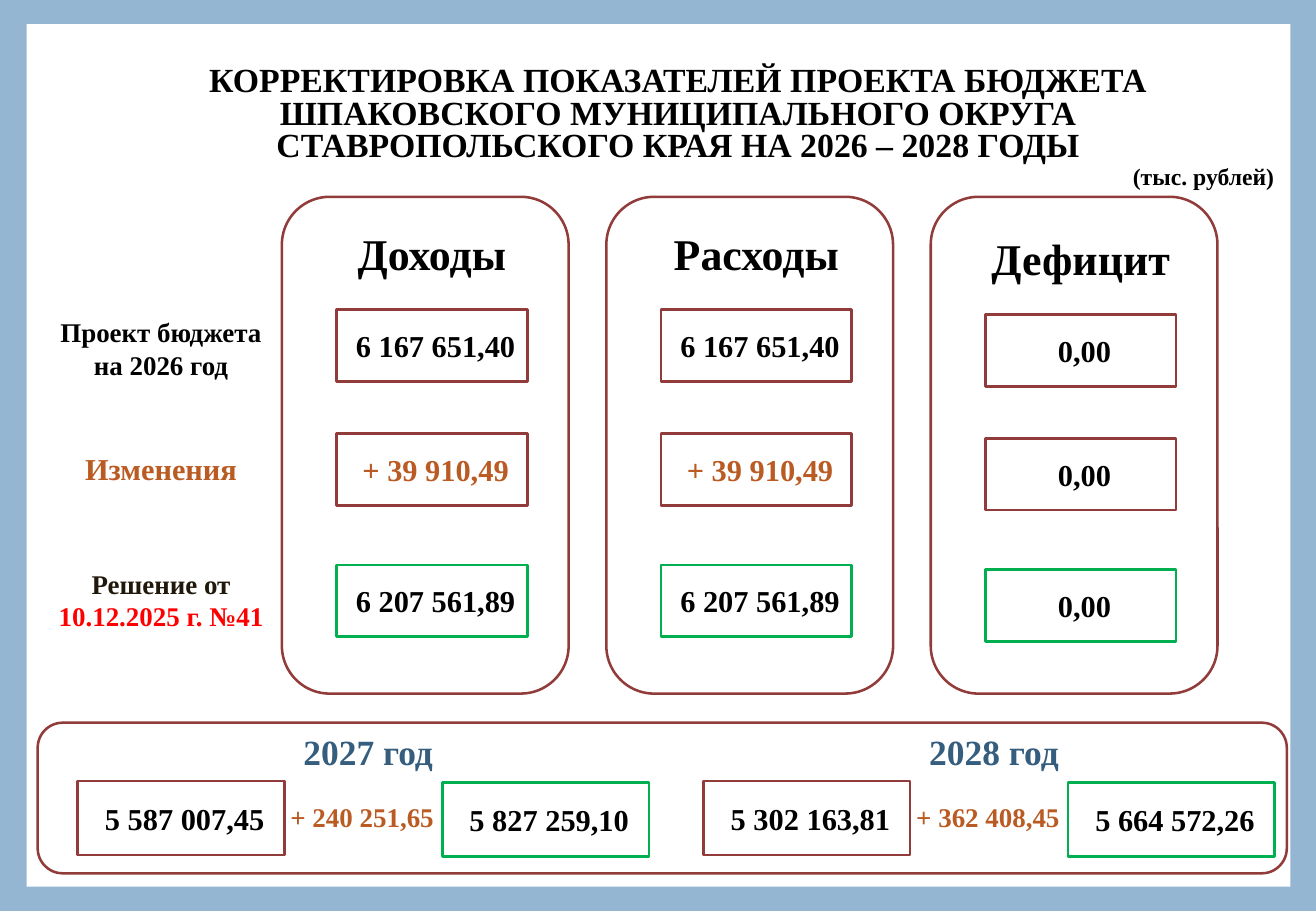
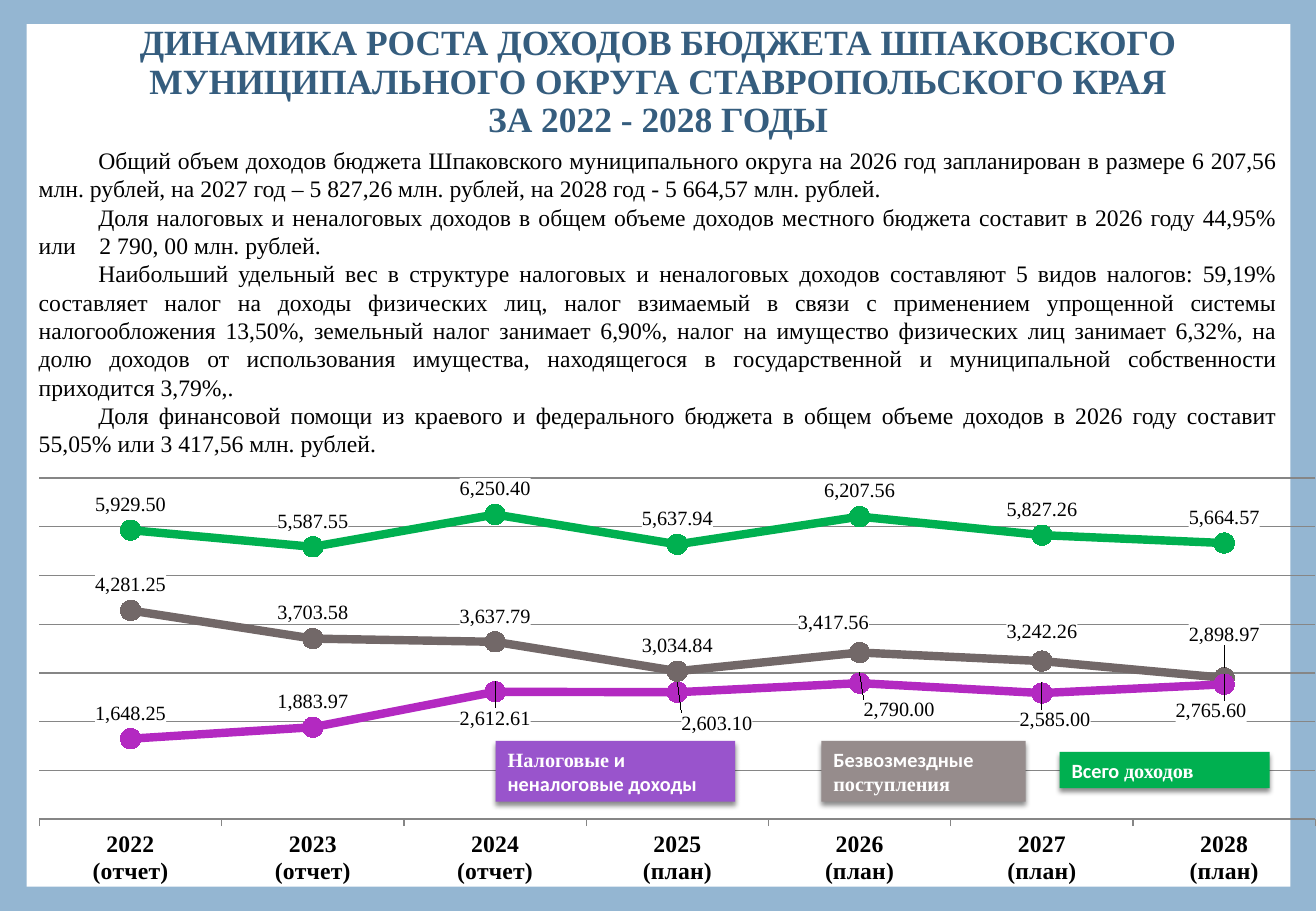
"""Builds two slides on the 2026-2028 municipal budget: adjusted figures and revenue trend."""
import pptx
import pptx.chart.data
import pptx.dml.color
import pptx.enum.chart
import pptx.enum.shapes
import pptx.enum.text
import pptx.oxml
import pptx.oxml.ns
import pptx.util
from dataclasses import dataclass

Inches = pptx.util.Inches
Pt = pptx.util.Pt
SHAPES = pptx.enum.shapes.MSO_SHAPE
ALIGN = pptx.enum.text.PP_ALIGN
ANCHOR = pptx.enum.text.MSO_ANCHOR
qn = pptx.oxml.ns.qn


@dataclass(frozen=True)
class Theme:
    serif: str = "Times New Roman"
    sans: str = "Calibri"
    edge: str = "94B6D2"
    white: str = "FFFFFF"
    black: str = "000000"
    dark: str = "20190B"
    red: str = "FF0000"
    maroon: str = "913C3A"
    green: str = "00B050"
    orange: str = "B95B22"
    blue: str = "355D7E"
    grid: str = "868686"
    grey: str = "726868"
    grey_fill: str = "968C8C"
    magenta: str = "B329C1"
    violet: str = "9954CC"
    heading: int = 26
    title: int = 21
    lead: int = 20
    figure: int = 18
    label: int = 16
    body: int = 14
    small: int = 12


THEME = Theme()

ADJUST_TITLE = ("КОРРЕКТИРОВКА ПОКАЗАТЕЛЕЙ ПРОЕКТА БЮДЖЕТА\nШПАКОВСКОГО МУНИЦИПАЛЬНОГО ОКРУГА\n"
                "СТАВРОПОЛЬСКОГО КРАЯ НА 2026 – 2028 ГОДЫ")
UNIT = "(тыс. рублей)"
COLUMNS = [("Доходы", 0), ("Расходы", 0), ("Дефицит", 0.04)]
ROWS = [
    dict(label=[[("Проект бюджета", {})], [("на 2026 год", {})]], label_top=2.55, top=2.55,
         frame=THEME.maroon, figures=["6 167 651,40", "6 167 651,40", "0,00"]),
    dict(label=[[("Изменения", dict(color=THEME.orange, size=THEME.figure))]], label_top=3.66, top=3.57,
         frame=THEME.maroon, figures=["+ 39 910,49", "+ 39 910,49", "0,00"]),
    dict(label=[[("Решение от ", dict(color=THEME.dark)), ("10.12.2025 г. №41", dict(color=THEME.red))]],
         label_top=4.62, top=4.65, frame=THEME.green, figures=["6 207 561,89", "6 207 561,89", "0,00"]),
]
YEARS = [
    ("2027 год", "5 587 007,45", "+ 240 251,65", "5 827 259,10"),
    ("2028 год", "5 302 163,81", "+ 362 408,45", "5 664 572,26"),
]

GROWTH_TITLE = ("ДИНАМИКА РОСТА ДОХОДОВ БЮДЖЕТА ШПАКОВСКОГО МУНИЦИПАЛЬНОГО ОКРУГА "
                "СТАВРОПОЛЬСКОГО КРАЯ\nЗА 2022 - 2028 ГОДЫ")
SUMMARY = [
    "Общий объем доходов бюджета Шпаковского муниципального округа на 2026 год запланирован в размере "
    "6 207,56 млн. рублей, на 2027 год – 5 827,26 млн. рублей, на 2028 год - 5 664,57 млн. рублей.",
    "Доля налоговых и неналоговых доходов в общем объеме доходов местного бюджета составит "
    "в 2026 году 44,95% или\t2 790, 00 млн. рублей.",
    "Наибольший удельный вес в структуре налоговых и неналоговых доходов составляют 5 видов налогов: "
    "59,19% составляет налог на доходы физических лиц, налог взимаемый в связи с применением упрощенной "
    "системы налогообложения 13,50%, земельный налог занимает 6,90%, налог на имущество физических лиц "
    "занимает 6,32%, на долю доходов от использования имущества, находящегося в государственной и "
    "муниципальной собственности приходится 3,79%,.",
    "Доля финансовой помощи из краевого и федерального бюджета в общем объеме доходов в 2026 году "
    "составит 55,05% или 3 417,56 млн. рублей.",
]
PERIODS = [f"{year}\n({'отчет' if year < 2025 else 'план'})" for year in range(2022, 2029)]
TRENDS = [
    dict(name="Всего доходов", color=THEME.green, shifts={},
         values=[5929.5, 5587.55, 6250.4, 5637.94, 6207.56, 5827.26, 5664.57]),
    dict(name="Безвозмездные поступления", color=THEME.grey,
         shifts={4: (-0.02, -0.01), 5: (0, -0.01), 6: (0, -0.04)},
         values=[4281.25, 3703.58, 3637.79, 3034.84, 3417.56, 3242.26, 2898.97]),
    dict(name="Налоговые и неналоговые доходы", color=THEME.magenta,
         shifts={2: (0, 0.12), 3: (0.03, 0.13), 4: (0.03, 0.12), 5: (0.01, 0.12), 6: (-0.01, 0.12)},
         values=[1648.25, 1883.97, 2612.61, 2603.1, 2790, 2585, 2765.6]),
]
SANS = dict(font=THEME.sans)
KEYS = [
    ((8.72, 6.19, 1.73, 0.3), THEME.green, [("Всего ", SANS), ("доходов", {})]),
    ((4.08, 6.1, 1.97, 0.5), THEME.violet, [("Налоговые", {}), (" и неналоговые доходы", SANS)]),
    ((6.76, 6.1, 1.68, 0.5), THEME.grey_fill, [("Безвозмездные ", SANS), ("поступления", {})]),
]
NUMBER_FORMAT = "#,##0.00"


def rgb(value):
    return pptx.dml.color.RGBColor.from_string(value)


def assign(target, **values):
    for name, value in values.items():
        setattr(target, name, value)


def element(xml):
    spaces = pptx.oxml.ns.nsdecls("a", "c")
    return pptx.oxml.parse_xml(xml.replace(">", f" {spaces}>", 1))


def paint(target, color):
    target.solid()
    target.fore_color.rgb = rgb(color)


def style_font(font, size, color=THEME.black, bold=True, face=THEME.serif):
    assign(font, size=Pt(size), bold=bold, name=face)
    font.color.rgb = rgb(color)


def write(frame, paragraphs, size, color=THEME.black, bold=True, wrap=True, anchor=ANCHOR.TOP, **layout):
    assign(frame, word_wrap=wrap, vertical_anchor=anchor)
    for index, runs in enumerate(paragraphs):
        paragraph = frame.add_paragraph() if index else frame.paragraphs[0]
        assign(paragraph, **layout)
        for text, extra in runs:
            for number, line in enumerate(text.split("\n")):
                if number:
                    paragraph.add_line_break()
                run = paragraph.add_run()
                run.text = line
                style_font(run.font, extra.get("size", size), extra.get("color", color), bold,
                           extra.get("font", THEME.serif))


def add_text(slide, place, paragraphs, size, **options):
    frame = slide.shapes.add_textbox(*map(Inches, place)).text_frame
    if isinstance(paragraphs, str):
        paragraphs = [[(paragraphs, {})]]
    options.setdefault("alignment", ALIGN.CENTER)
    write(frame, paragraphs, size, **options)
    return frame


def add_box(slide, place, kind=SHAPES.RECTANGLE, fill=None, line=None):
    box = slide.shapes.add_shape(kind, *map(Inches, place))
    box.shadow.inherit = False
    if fill:
        paint(box.fill, fill)
    else:
        box.fill.background()
    if line:
        paint(box.line.fill, line)
        box.line.width = Pt(1.5)
    else:
        box.line.fill.background()
    return box


def add_figure(slide, place, figure, frame_color):
    frame = add_box(slide, place, line=frame_color).text_frame
    color = THEME.orange if figure.startswith("+") else THEME.black
    assign(frame, margin_left=Inches(0.06), margin_right=0)
    write(frame, [[(figure, {})]], THEME.figure, color=color, wrap=False,
          anchor=ANCHOR.MIDDLE, alignment=ALIGN.CENTER)


def new_slide(deck, title, place, **options):
    slide = deck.slides.add_slide(deck.slide_layouts[6])
    paint(slide.background.fill, THEME.edge)
    add_box(slide, (0.22, 0.2, 10.4, 7.1), fill=THEME.white)
    add_text(slide, place, title, anchor=ANCHOR.MIDDLE, **options)
    return slide


def build_adjustment(deck):
    slide = new_slide(deck, ADJUST_TITLE, (0.4, 0.46, 10.36, 0.98), size=THEME.lead, line_spacing=0.8)
    add_text(slide, (9.22, 1.28, 1.37, 0.34), UNIT, THEME.body, wrap=False)
    for row in ROWS:
        add_text(slide, (0.24, row["label_top"], 2.17, 0.64), row["label"], THEME.label)
    for index, (heading, drop) in enumerate(COLUMNS):
        left = 2.32 + 2.67 * index
        add_box(slide, (left, 1.62, 2.36, 4.09), SHAPES.ROUNDED_RECTANGLE, line=THEME.maroon)
        add_text(slide, (left + 0.17, 1.82 + drop, 2.13, 0.54), heading, THEME.heading)
        for row in ROWS:
            add_figure(slide, (left + 0.45, row["top"] + drop, 1.57, 0.59), row["figures"][index], row["frame"])
    add_box(slide, (0.31, 5.95, 10.28, 1.24), SHAPES.FLOWCHART_ALTERNATE_PROCESS, line=THEME.maroon)
    for index, (year, draft, change, decision) in enumerate(YEARS):
        left = 0.64 + 5.15 * index
        add_text(slide, (left + 1.25, 5.96, 2.28, 0.45), year, THEME.title, color=THEME.blue)
        add_figure(slide, (left, 6.43, 1.7, 0.61), draft, THEME.maroon)
        add_text(slide, (left + 1.64, 6.54, 1.4, 0.37), change, THEME.label, color=THEME.orange, wrap=False)
        add_figure(slide, (left + 3, 6.44, 1.7, 0.61), decision, THEME.green)


def style_trend(series, trend):
    series.smooth = False
    series.format.line.width = Pt(5)
    assign(series.marker, style=pptx.enum.chart.XL_MARKER_STYLE.CIRCLE, size=12)
    for fill in (series.format.line.fill, series.marker.format.fill, series.marker.format.line.fill):
        paint(fill, trend["color"])
    above = pptx.enum.chart.XL_LABEL_POSITION.ABOVE
    labels = series.data_labels
    assign(labels, show_value=True, position=above, number_format=NUMBER_FORMAT, number_format_is_linked=False)
    style_font(labels.font, THEME.small, bold=False)
    for index in trend["shifts"]:
        label = series.points[index].data_label
        style_font(label.font, THEME.small, bold=False)
        label.position = above
    group = labels._element
    for text in list(group.iter(qn("c:txPr"))):
        text.addprevious(element(f'<c:spPr><a:solidFill><a:srgbClr val="{THEME.white}"/></a:solidFill></c:spPr>'))
    for label in group.findall(qn("c:dLbl")):
        number = label.find(qn("c:idx"))
        x, y = trend["shifts"][int(number.get("val"))]
        number.addnext(element(f'<c:layout><c:manualLayout><c:x val="{x}"/><c:y val="{y}"/>'
                               '</c:manualLayout></c:layout>'))
        label.find(qn("c:spPr")).addprevious(
            element(f'<c:numFmt formatCode="{NUMBER_FORMAT}" sourceLinked="0"></c:numFmt>'))


def place_plot(chart, **sizes):
    plot_area = chart._chartSpace.find(".//" + qn("c:plotArea"))
    for layout in plot_area.findall(qn("c:layout")):
        plot_area.remove(layout)
    frame = "".join(f'<c:{key} val="{value}"/>' for key, value in sizes.items())
    plot_area.insert(0, element('<c:layout><c:manualLayout><c:layoutTarget val="inner"/>'
                                f'<c:xMode val="edge"/><c:yMode val="edge"/>{frame}'
                                '</c:manualLayout></c:layout>'))


def add_trends(slide):
    data = pptx.chart.data.CategoryChartData(number_format=NUMBER_FORMAT)
    data.categories = PERIODS
    for trend in TRENDS:
        data.add_series(trend["name"], trend["values"])
    chart = slide.shapes.add_chart(pptx.enum.chart.XL_CHART_TYPE.LINE_MARKERS,
                                   *map(Inches, (0, 3.9, 10.83, 3.6)), data).chart
    assign(chart, has_legend=False, has_title=False)
    style_font(chart.font, THEME.figure, bold=False)
    plot = chart.plots[0]
    plot.vary_by_categories = False
    for series, trend in zip(plot.series, TRENDS):
        style_trend(series, trend)
    style_font(chart.category_axis.tick_labels.font, THEME.body)
    chart.category_axis.major_tick_mark = pptx.enum.chart.XL_TICK_MARK.OUTSIDE
    assign(chart.value_axis, visible=False, has_major_gridlines=True,
           minimum_scale=0, maximum_scale=7000, major_unit=1000)
    for ruled in (chart.category_axis, chart.value_axis.major_gridlines):
        paint(ruled.format.line.fill, THEME.grid)
        ruled.format.line.width = Pt(0.75)
    place_plot(chart, x=0.03, y=0.01, w=0.97, h=0.78)


def add_key(slide, place, color, runs):
    key = add_box(slide, place, fill=color)
    effects = key._element.spPr.find(qn("a:effectLst"))
    effects.append(element(f'<a:outerShdw blurRad="{Pt(3)}" dist="{Pt(2)}" dir="5400000" rotWithShape="0">'
                           f'<a:srgbClr val="{THEME.black}"><a:alpha val="45000"/></a:srgbClr></a:outerShdw>'))
    write(key.text_frame, [runs], THEME.small, color=THEME.white, anchor=ANCHOR.MIDDLE, alignment=ALIGN.LEFT)


def build_growth(deck):
    slide = new_slide(deck, GROWTH_TITLE, (0.22, 0.21, 10.39, 0.94),
                      size=THEME.title, color=THEME.blue, line_spacing=0.9)
    add_trends(slide)
    for key in KEYS:
        add_key(slide, *key)
    summary = add_text(slide, (0.22, 1.15, 10.39, 2.69), [[(text, {})] for text in SUMMARY],
                       THEME.body, bold=False, alignment=ALIGN.JUSTIFY)
    for paragraph in summary.paragraphs:
        properties = paragraph._p.get_or_add_pPr()
        properties.set("marL", "0")
        properties.set("indent", str(int(Inches(0.49))))
        properties.append(element(f'<a:tabLst><a:tab pos="{Inches(0.55)}" algn="l"/></a:tabLst>'))


def main():
    deck = pptx.Presentation()
    assign(deck, slide_width=Inches(10.83), slide_height=Inches(7.5))
    build_adjustment(deck)
    build_growth(deck)
    deck.save("out.pptx")


if __name__ == "__main__":
    main()
